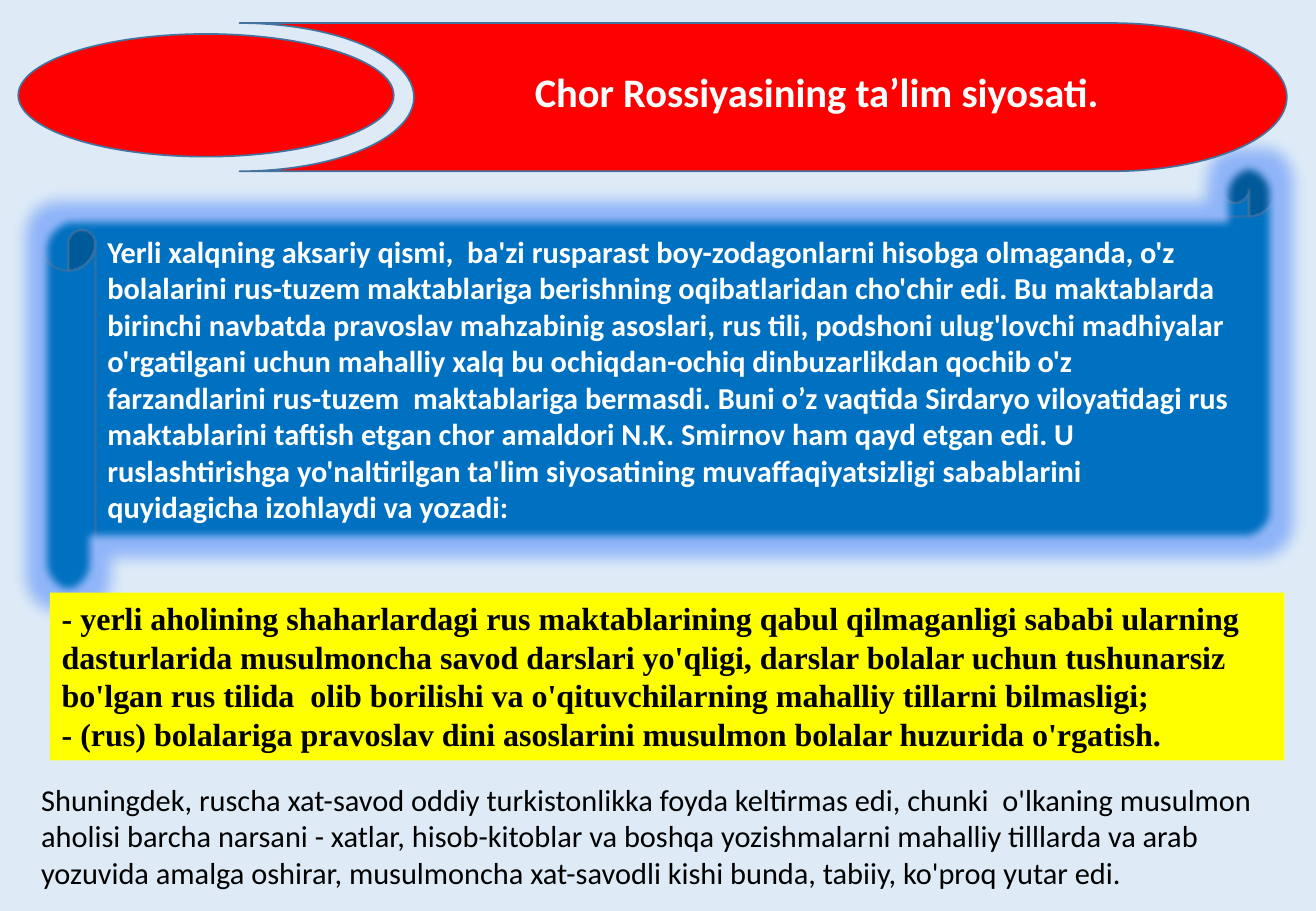
from lxml import etree
from pptx import Presentation
from pptx.dml.color import RGBColor
from pptx.enum.shapes import MSO_SHAPE
from pptx.enum.text import MSO_ANCHOR, PP_ALIGN
from pptx.oxml.ns import qn
from pptx.util import Inches, Pt

SCROLL = MSO_SHAPE.HORIZONTAL_SCROLL
ELLIPSE = MSO_SHAPE.OVAL
BANNER = MSO_SHAPE.FLOWCHART_STORED_DATA
RECTANGLE = MSO_SHAPE.RECTANGLE
LEFT, CENTER = PP_ALIGN.LEFT, PP_ALIGN.CENTER
TOP, MIDDLE = MSO_ANCHOR.TOP, MSO_ANCHOR.MIDDLE
TITLE_ONLY = 5

TITLE = "Chor Rossiyasining ta’lim siyosati. "
POLICY = (
    "Yerli xalqning aksariy qismi,  ba'zi rusparast boy-zodagonlarni hisobga olmaganda, "
    "o'z bolalarini rus-tuzem maktablariga berishning oqibatlaridan cho'chir edi. "
    "Bu maktablarda birinchi navbatda pravoslav mahzabinig asoslari, rus tili, podshoni "
    "ulug'lovchi madhiyalar o'rgatilgani uchun mahalliy xalq bu ochiqdan-ochiq "
    "dinbuzarlikdan qochib o'z farzandlarini rus-tuzem  maktablariga bermasdi. "
    "Buni o’z vaqtida Sirdaryo viloyatidagi rus maktablarini taftish etgan chor amaldori "
    "N.K. Smirnov ham qayd etgan edi. U ruslashtirishga yo'naltirilgan ta'lim siyosatining "
    "muvaffaqiyatsizligi sabablarini quyidagicha izohlaydi va yozadi:"
)
REASONS = [
    "- yerli aholining shaharlardagi rus maktablarining qabul qilmaganligi sababi ularning "
    "dasturlarida musulmoncha savod darslari yo'qligi, darslar bolalar uchun tushunarsiz "
    "bo'lgan rus tilida  olib borilishi va o'qituvchilarning mahalliy tillarni bilmasligi;",
    "- (rus) bolalariga pravoslav dini asoslarini musulmon bolalar huzurida o'rgatish.",
]
CONCLUSION = (
    "Shuningdek, ruscha xat-savod oddiy turkistonlikka foyda keltirmas edi, "
    "chunki  o'lkaning musulmon aholisi barcha narsani - xatlar, hisob-kitoblar va boshqa "
    "yozishmalarni mahalliy tilllarda va arab yozuvida amalga oshirar, musulmoncha "
    "xat-savodli kishi bunda, tabiiy, ko'proq yutar edi."
)


def rgb(hex_color):
    return RGBColor.from_string(hex_color)


class SlideBuilder:
    font, outline = "Calibri", "43739E"
    red, blue, yellow = "FF0000", "0070C0", "FFFF00"
    white, black, glow_color = "FFFFFF", "000000", "1962FA"

    def __init__(self, slide):
        self.slide = slide
        slide.background.fill.solid()
        slide.background.fill.fore_color.rgb = rgb("DEEBF7")

    def add_text(self, shape, paragraphs, size, color, bold=True, font=font,
                 align=LEFT, anchor=TOP):
        frame = shape.text_frame
        frame.word_wrap = True
        frame.vertical_anchor = anchor
        for index, text in enumerate(paragraphs):
            paragraph = frame.add_paragraph() if index else frame.paragraphs[0]
            paragraph.alignment = align
            run = paragraph.add_run()
            run.text = text
            run.font.name, run.font.size, run.font.bold = font, Pt(size), bold
            run.font.color.rgb = rgb(color)

    def title(self, text, *box):
        """Fill the title placeholder and bring it in front of the banner."""
        title = self.slide.shapes.title
        title.left, title.top, title.width, title.height = map(Inches, box)
        self.add_text(title, [text], 24, self.white, align=CENTER, anchor=MIDDLE)
        tree = title._element.getparent()
        tree.append(title._element)

    def shape(self, kind, fill, *box, outlined=True):
        shape = self.slide.shapes.add_shape(kind, *map(Inches, box))
        shape.shadow.inherit = False
        shape.fill.solid()
        shape.fill.fore_color.rgb = rgb(fill)
        if outlined:
            shape.line.color.rgb = rgb(self.outline)
            shape.line.width = Pt(1)
        else:
            shape.line.fill.background()
        return shape

    def text(self, paragraphs, size, *box):
        text_box = self.slide.shapes.add_textbox(*map(Inches, box))
        self.add_text(text_box, paragraphs, size, self.black, bold=False)

    def glow(self, shape, radius, softness):
        """Add a glow and soft edges, both measured in points."""
        effects = shape._element.spPr.find(qn("a:effectLst"))
        glow = etree.SubElement(effects, qn("a:glow"), rad=str(Pt(radius)))
        color = etree.SubElement(glow, qn("a:srgbClr"), val=self.glow_color)
        etree.SubElement(color, qn("a:alpha"), val="40000")
        etree.SubElement(effects, qn("a:softEdge"), rad=str(Pt(softness)))


def main():
    deck = Presentation()
    deck.slide_width, deck.slide_height = Inches(10.83), Inches(7.5)
    page = SlideBuilder(deck.slides.add_slide(deck.slide_layouts[TITLE_ONLY]))

    scroll = page.shape(SCROLL, page.blue, 0.34, 1.34, 10.16, 3.56)
    page.glow(scroll, 18, 5)
    page.add_text(scroll, [POLICY], 18, page.white, anchor=MIDDLE)

    page.shape(ELLIPSE, page.red, 0.15, 0.28, 3.09, 1.01)
    banner = page.shape(BANNER, page.red, 1.97, 0.19, 8.62, 1.22)
    banner.rotation = 180
    page.title(TITLE, 3.58, 0.5, 6.36, 0.5)

    reasons = page.shape(RECTANGLE, page.yellow, 0.41, 4.88, 10.16, 1.38, outlined=False)
    page.add_text(reasons, REASONS, 19, page.black, font="Times New Roman")
    page.text([CONCLUSION], 18, 0.24, 6.38, 10.35, 1.01)

    deck.save("out.pptx")


if __name__ == "__main__":
    main()
